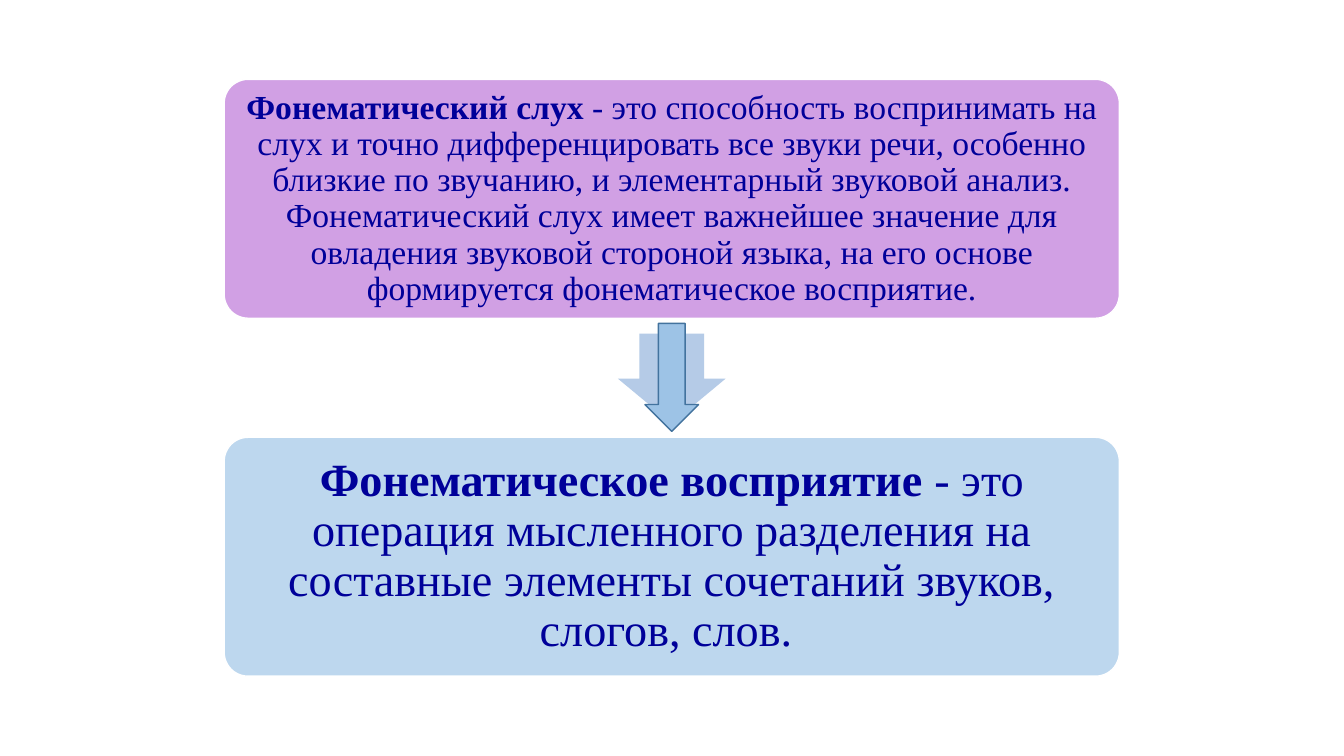
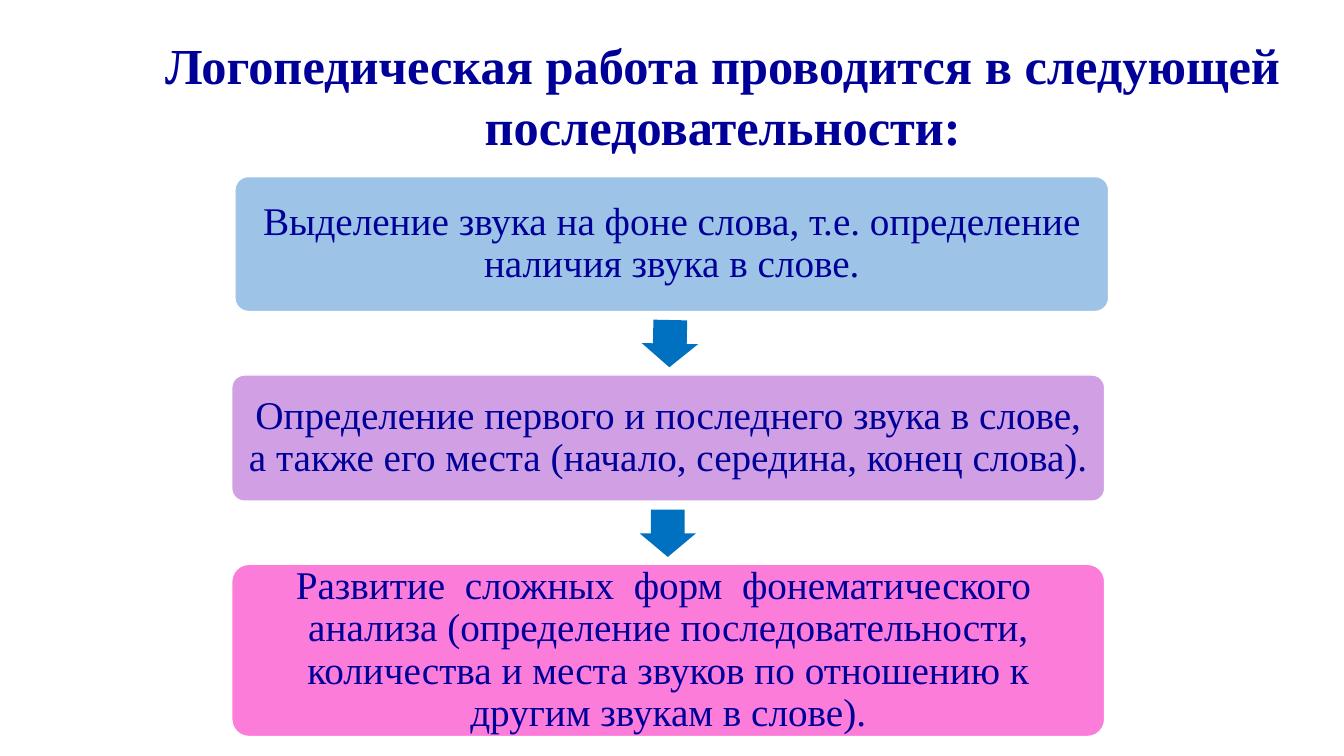
"""Build two slides on phonemic hearing and the order of speech therapy work."""
from dataclasses import dataclass

import pptx
import pptx.dml.color
import pptx.enum.shapes
import pptx.enum.text
import pptx.util

Cm = pptx.util.Cm
Pt = pptx.util.Pt
Kind = pptx.enum.shapes.MSO_SHAPE
Anchor = pptx.enum.text.MSO_ANCHOR

FONT = "Times New Roman"
INK = "000099"
WHITE = "FFFFFF"
LILAC = "D1A0E4"
SKY = "9DC3E6"
BLUE = "0070C0"


@dataclass
class Box:
    left: float
    top: float
    width: float
    height: float
    fill: str
    size: int
    inset: float
    text: str
    lead: str = ""


@dataclass
class Arrow:
    mid_x: float
    mid_y: float
    width: float
    height: float
    fill: str
    shaft: float = 0.6
    turn: float = 0
    edge: str = ""


HEARING = [
    Box(5.65, 2, 22.56, 6.02, LILAC, 24, 0.25,
        "- это способность воспринимать на слух и точно дифференцировать все "
        "звуки речи, особенно близкие по звучанию, и элементарный звуковой "
        "анализ. Фонематический слух имеет важнейшее значение для овладения "
        "звуковой стороной языка, на его основе формируется фонематическое "
        "восприятие.",
        "Фонематический слух "),
    Arrow(16.93, 9.54, 2.72, 2.26, "B5CBE7"),
    Box(5.65, 11.02, 22.56, 6.02, "BDD7EE", 33, 0.36,
        "- это операция мысленного разделения на составные элементы "
        "сочетаний звуков, слогов, слов. ",
        "Фонематическое восприятие "),
    Arrow(16.93, 9.51, 1.35, 2.72, SKY, shaft=0.5, edge="43739E"),
]

STEPS = [
    Box(5.92, 4.45, 22.02, 3.4, SKY, 28, 0.3,
        "Выделение звука на фоне слова, т.е. определение наличия звука в "
        "слове."),
    Arrow(16.88, 8.66, 1.42, 1.19, BLUE, turn=1.2),
    Box(5.84, 9.45, 22, 3.18, LILAC, 28, 0.3,
        "Определение первого и последнего звука в слове, а также его места "
        "(начало, середина, конец слова)."),
    Arrow(16.83, 13.44, 1.42, 1.19, BLUE),
    Box(5.84, 14.22, 22, 4.34, "FC7CDA", 28, 0.3,
        "Развитие  сложных  форм  фонематического  анализа (определение "
        "последовательности, количества и места звуков по отношению к другим "
        "звукам в слове)."),
]


def rgb(code: str) -> pptx.dml.color.RGBColor:
    return pptx.dml.color.RGBColor.from_string(code)


def paint(shape, fill: str, edge: str) -> None:
    shape.shadow.inherit = False
    shape.fill.solid()
    shape.fill.fore_color.rgb = rgb(fill)
    if edge:
        shape.line.color.rgb = rgb(edge)
        shape.line.width = Pt(1)
    else:
        shape.line.fill.background()


def style(para, size: int) -> None:
    para.alignment = pptx.enum.text.PP_ALIGN.CENTER
    para.font.name = FONT
    para.font.size = Pt(size)
    para.font.color.rgb = rgb(INK)


def draw_box(slide, box: Box) -> None:
    shape = slide.shapes.add_shape(
        Kind.ROUNDED_RECTANGLE,
        Cm(box.left), Cm(box.top), Cm(box.width), Cm(box.height))
    shape.adjustments[0] = 0.1
    paint(shape, box.fill, WHITE)
    frame = shape.text_frame
    frame.word_wrap = True
    frame.vertical_anchor = Anchor.MIDDLE
    frame.margin_left = frame.margin_right = Cm(box.inset)
    frame.margin_top = frame.margin_bottom = Cm(box.inset)
    para = frame.paragraphs[0]
    para.line_spacing = 0.9
    style(para, box.size)
    if box.lead:
        run = para.add_run()
        run.text = box.lead
        run.font.bold = True
    para.add_run().text = box.text


def draw_arrow(slide, arrow: Arrow) -> None:
    shape = slide.shapes.add_shape(
        Kind.DOWN_ARROW,
        Cm(arrow.mid_x - arrow.width / 2), Cm(arrow.mid_y - arrow.height / 2),
        Cm(arrow.width), Cm(arrow.height))
    shape.adjustments[0] = arrow.shaft
    shape.adjustments[1] = 0.5
    shape.rotation = arrow.turn
    paint(shape, arrow.fill, arrow.edge)


def draw_title(slide, text: str) -> None:
    title = slide.shapes.title
    title.left, title.top = Cm(3.61), Cm(0.74)
    title.width, title.height = Cm(29.21), Cm(3.33)
    frame = title.text_frame
    frame.text = text
    frame.word_wrap = True
    frame.auto_size = pptx.enum.text.MSO_AUTO_SIZE.NONE
    frame.vertical_anchor = Anchor.TOP
    para = frame.paragraphs[0]
    style(para, 36)
    para.font.bold = True


def draw_flow(slide, parts: list[Box | Arrow]) -> None:
    for part in parts:
        if isinstance(part, Box):
            draw_box(slide, part)
        else:
            draw_arrow(slide, part)


def main() -> None:
    deck = pptx.Presentation()
    deck.slide_width, deck.slide_height = Cm(33.87), Cm(19.05)
    bare, titled = deck.slide_layouts[6], deck.slide_layouts[5]
    draw_flow(deck.slides.add_slide(bare), HEARING)
    slide = deck.slides.add_slide(titled)
    draw_title(slide, "Логопедическая работа проводится в следующей "
                      "последовательности:")
    draw_flow(slide, STEPS)
    deck.save("out.pptx")


if __name__ == "__main__":
    main()
